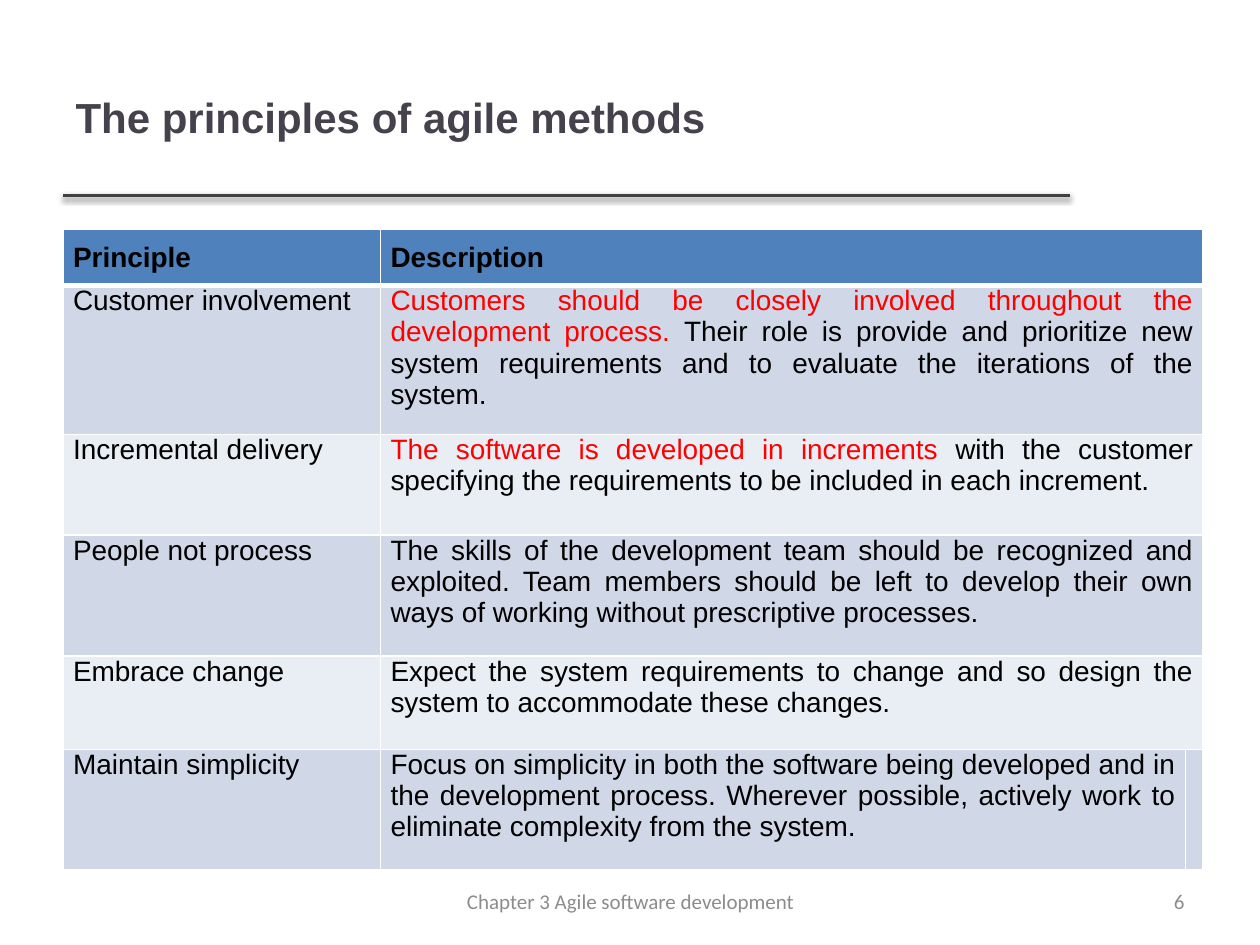
from lxml.etree import SubElement
from pptx import Presentation
from pptx.dml.color import RGBColor
from pptx.enum.shapes import MSO_CONNECTOR
from pptx.enum.text import MSO_ANCHOR, PP_ALIGN
from pptx.oxml import parse_xml
from pptx.oxml.ns import nsdecls, qn
from pptx.util import Inches, Pt

BLACK = RGBColor(0x00, 0x00, 0x00)
RED = RGBColor(0xFF, 0x00, 0x00)
WHITE = RGBColor(0xFF, 0xFF, 0xFF)
TITLE = RGBColor(0x46, 0x42, 0x4D)
RULE = RGBColor(0x40, 0x40, 0x40)
FOOTER = RGBColor(0x8C, 0x8C, 0x8C)
HEADER = RGBColor(0x4F, 0x81, 0xBD)
BANDS = RGBColor(0xE9, 0xED, 0xF4), RGBColor(0xD0, 0xD8, 0xE8)

# Each row: principle, highlighted opening of the description, the rest
PRINCIPLES = [
    ("Principle", "", "Description"),
    ("Customer involvement ",
     "Customers should be closely involved throughout the development process. ",
     "Their role is provide and prioritize new system requirements and to "
     "evaluate the iterations of the system."),
    ("Incremental delivery",
     "The software is developed in increments ",
     "with the customer specifying the requirements to be included in each increment."),
    ("People not process", "",
     "The skills of the development team should be recognized and exploited. "
     "Team members should be left to develop their own ways of working "
     "without prescriptive processes."),
    ("Embrace change", "",
     "Expect the system requirements to change and so design the system to "
     "accommodate these changes."),
    ("Maintain simplicity", "",
     "Focus on simplicity in both the software being developed and in the "
     "development process. Wherever possible, actively work to eliminate "
     "complexity from the system."),
]
COLUMNS = [25.2, 63.9, 1.4]
ROWS = [4.4, 11.8, 8, 9.6, 7.4, 9.6]


def grid(*cells):
    """Lengths on a grid of 100 columns by 75 rows, each a tenth of an inch."""
    return [Inches(c / 10) for c in cells]


class Deck:
    def __init__(self):
        self.prs = Presentation()
        self.prs.slide_width, self.prs.slide_height = grid(100, 75)
        self.s = self.prs.slides.add_slide(self.prs.slide_layouts[5])

    def style(self, p, size, color, font="Arial", bold=False, align=PP_ALIGN.LEFT):
        p.alignment = align
        for r in p.runs:
            r.font.name, r.font.size, r.font.bold = font, Pt(size), bold
            r.font.color.rgb = color

    def title(self, text, *box):
        sp = self.s.shapes.title
        sp.left, sp.top, sp.width, sp.height = grid(*box)
        tf = sp.text_frame
        tf.text, tf.vertical_anchor = text, MSO_ANCHOR.MIDDLE
        self.style(tf.paragraphs[0], 24, TITLE, bold=True)

    def rule(self, x1, x2, y):
        line = self.s.shapes.add_connector(MSO_CONNECTOR.STRAIGHT, *grid(x1, y, x2, y))
        line.line.color.rgb, line.line.width = RULE, Pt(2)
        line._element.spPr.append(parse_xml(
            f'<a:effectLst {nsdecls("a")}><a:outerShdw blurRad="{Pt(3.1)}" '
            f'dist="{Pt(1.6)}" dir="5400000" rotWithShape="0"><a:srgbClr val="000000">'
            '<a:alpha val="38000"/></a:srgbClr></a:outerShdw></a:effectLst>'))

    def footer(self, text, align, *box):
        tf = self.s.shapes.add_textbox(*grid(*box)).text_frame
        tf.word_wrap, tf.vertical_anchor = True, MSO_ANCHOR.MIDDLE
        tf.text = text
        self.style(tf.paragraphs[0], 12, FOOTER, "Calibri", align=align)

    def cell(self, cell, fill, top_width, bottom_width):
        tcPr = cell._tc.get_or_add_tcPr()
        for side, width in zip("LRTB", (1, 1, top_width, bottom_width)):
            ln = SubElement(tcPr, qn(f"a:ln{side}"), w=str(Pt(width)))
            SubElement(SubElement(ln, qn("a:solidFill")), qn("a:srgbClr"), val=str(WHITE))
        cell.fill.solid()
        cell.fill.fore_color.rgb = fill

    def cell_text(self, cell, lead, rest, header):
        cell.margin_left, cell.margin_right, cell.margin_top, cell.margin_bottom = grid(
            0.8, 0.8, 1 if header else 0, 1)
        p = cell.text_frame.paragraphs[0]
        p.text = lead or rest
        if lead:
            p.add_run().text = rest
        self.style(p, 16, BLACK, bold=header, align=PP_ALIGN.JUSTIFY)
        if lead:
            p.runs[0].font.color.rgb = RED

    def table(self, rows, x, y):
        size = len(ROWS), len(COLUMNS)
        table = self.s.shapes.add_table(
            *size, *grid(x, y, sum(COLUMNS), sum(ROWS))).table
        for column, width in zip(table.columns, grid(*COLUMNS)):
            column.width = width
        for i, (height, (name, lead, rest)) in enumerate(zip(grid(*ROWS), rows)):
            table.rows[i].height = height
            for cell in table.rows[i].cells:
                self.cell(cell, BANDS[i % 2] if i else HEADER,
                          3 if i == 1 else 1, 1 if i else 3)
            self.cell_text(table.cell(i, 0), "", name, i == 0)
            self.cell_text(table.cell(i, 1), lead, rest, i == 0)
            last = table.cell(i, 2)
            if i < len(rows) - 1:
                table.cell(i, 1).merge(last)
            else:
                last.margin_left = last.margin_right = 0


def main():
    deck = Deck()
    deck.rule(5, 84.9, 15.5)
    deck.title("The principles of agile methods", 5, 3, 79.8, 12.5)
    deck.table(PRINCIPLES, 5, 18.2)
    deck.footer("6", PP_ALIGN.RIGHT, 71.7, 69.5, 23.3, 4)
    deck.footer("Chapter 3 Agile software development", PP_ALIGN.CENTER,
                34.2, 69.5, 31.7, 4)
    deck.prs.save("out.pptx")


if __name__ == "__main__":
    main()
